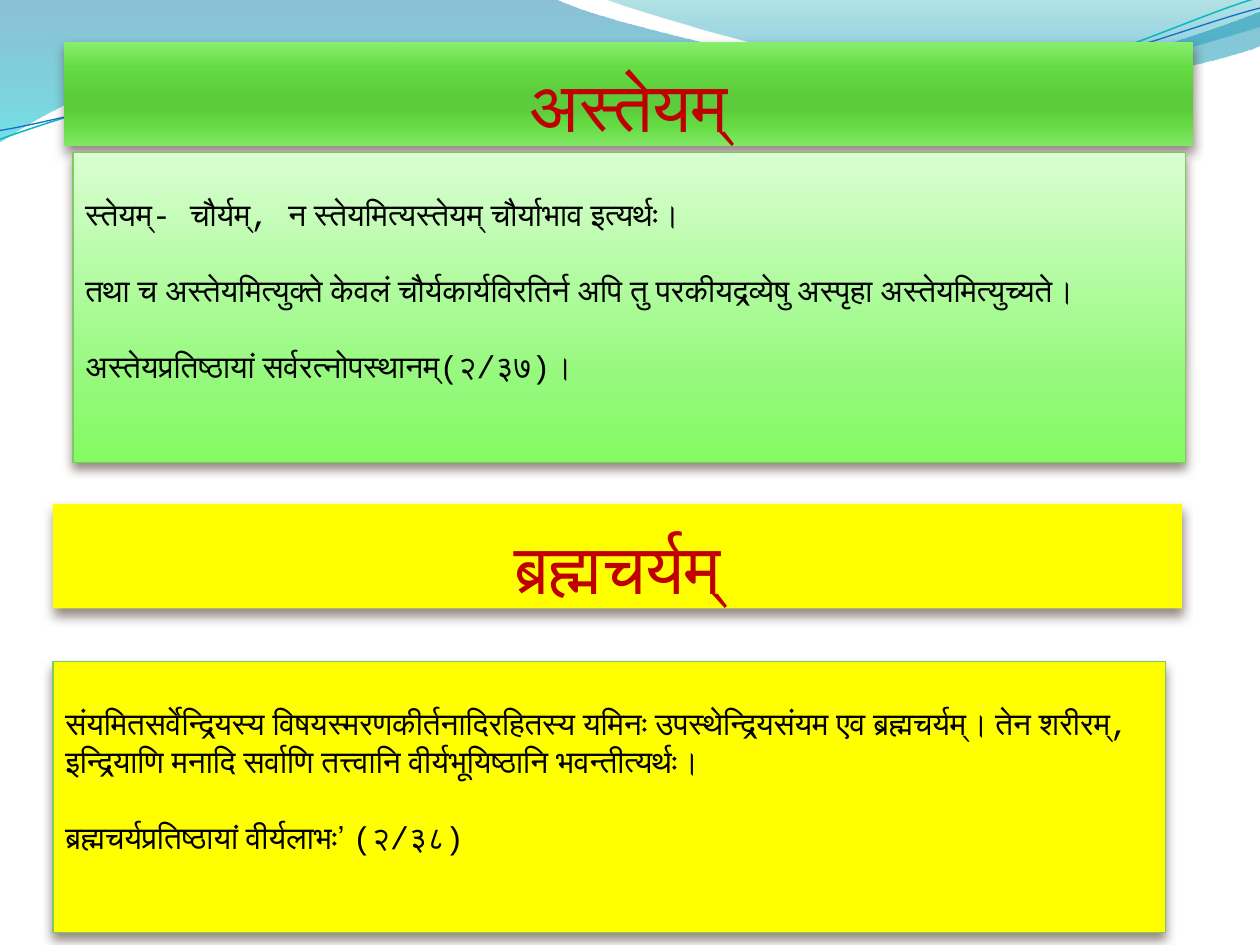
from dataclasses import dataclass

from lxml.etree import SubElement
from pptx import Presentation
from pptx.dml.color import RGBColor
from pptx.enum.shapes import MSO_SHAPE
from pptx.enum.text import MSO_ANCHOR, PP_ALIGN
from pptx.oxml.ns import qn
from pptx.util import Inches, Pt


@dataclass(frozen=True)
class Theme:
    heading_color: str = "C00000"
    body_color: str = "000000"
    border: str = "7CCA62"
    shadow: str = "4E3B30"
    yellow: str = "FFFF00"
    heading_font: str = "Arial"
    body_font: str = "Courier New"
    heading_size: int = 40
    body_size: int = 18
    # Gradient stops: position %, colour, opacity %
    green_banner: tuple = ((0, "89EE70", 100), (25, "65DC43", 100),
                           (50, "5CCC3C", 100), (65, "5CCC3C", 100),
                           (80, "64DB42", 100), (100, "82E868", 100))
    green_panel: tuple = ((0, "D9FED1", 100), (72, "96F97E", 100),
                          (100, "83FB62", 100))
    deep_wave: tuple = ((0, "0074A1", 45), (100, "00C6CF", 55))
    pale_wave: tuple = ((0, "00A1A9", 30), (80, "008BBF", 45))
    teal_line: str = "0AB8BF"
    blue_line: str = "0F6FC6"


THEME = Theme()
LINE_TILT = 357.3

# Wave outlines: a start, then steps of one point (straight) or three (Bezier)
DEEP_WAVE = [
    [(0, 0)],
    [(4.4, -0.01)],
    [(4.76, 0.17), (6.64, 0.63), (7.58, 0.63)],
    [(8.53, 0.63), (9.58, 0.26), (10, 0.09)],
    [(10.01, 0.36)],
    [(9.83, 0.44), (8.7, 0.76), (7.46, 0.75)],
    [(6.22, 0.75), (3.82, 0.28), (2.57, 0.34)],
    [(1.29, 0.36), (0.46, 0.83), (-0.01, 1.13)],
    [(0, 0)]]
PALE_WAVE = [
    [(4.79, -0.01)],
    [(5.09, 0.11), (6.82, 0.62), (7.69, 0.65)],
    [(8.56, 0.69), (9.61, 0.32), (10, 0.21)],
    [(10, 0)],
    [(4.79, -0.01)]]
TEAL_LINE = [
    [(-0.02, 0.87)],
    [(0.47, 0.72), (1.58, 0.41), (2.78, 0.42)],
    [(3.96, 0.42), (5.91, 0.93), (7.12, 0.9)],
    [(8.32, 0.87), (9.4, 0.36), (10, 0.22)]]
BLUE_LINE = [
    [(-0.02, 0.8)],
    [(0.46, 0.75), (1.64, 0.45), (2.83, 0.46)],
    [(4.03, 0.46), (5.96, 0.89), (7.16, 0.85)],
    [(8.35, 0.83), (9.42, 0.42), (10.02, 0.3)]]

ASTEYA = [
    "स्तेयम्- चौर्यम्, न स्तेयमित्यस्तेयम् चौर्याभाव इत्यर्थः।",
    "तथा च अस्तेयमित्युक्ते केवलं चौर्यकार्यविरतिर्न अपि तु परकीयद्रव्येषु अस्पृहा अस्तेयमित्युच्यते।",
    "अस्तेयप्रतिष्ठायां सर्वरत्नोपस्थानम्(२/३७)।",
]
BRAHMACHARYA = [
    "संयमितसर्वेन्द्रियस्य विषयस्मरणकीर्तनादिरहितस्य यमिनः उपस्थेन्द्रियसंयम एव ब्रह्मचर्यम्। "
    "तेन शरीरम्, इन्द्रियाणि मनादि सर्वाणि तत्त्वानि वीर्यभूयिष्ठानि भवन्तीत्यर्थः।",
    "ब्रह्मचर्यप्रतिष्ठायां वीर्यलाभः’ (२/३८)",
]

HEADING_FORMAT = {
    "frame": {"word_wrap": True, "vertical_anchor": MSO_ANCHOR.BOTTOM,
              "margin_left": 0, "margin_right": 0,
              "margin_top": Inches(0.05), "margin_bottom": 0},
    "paragraph": {"alignment": PP_ALIGN.CENTER},
    "font": {"name": THEME.heading_font, "size": Pt(THEME.heading_size)},
    "color": THEME.heading_color,
}
BODY_FORMAT = {
    "frame": {"word_wrap": True, "vertical_anchor": MSO_ANCHOR.TOP,
              "margin_left": Inches(0.1), "margin_right": Inches(0.1),
              "margin_top": Inches(0.34), "margin_bottom": 0},
    "paragraph": {"alignment": PP_ALIGN.LEFT, "space_after": Pt(21.7)},
    "font": {"name": THEME.body_font, "size": Pt(THEME.body_size)},
    "color": THEME.body_color,
}


def apply_format(target, values):
    for attribute, value in values.items():
        setattr(target, attribute, value)


def add_color(parent, color, opacity):
    node = SubElement(parent, qn("a:srgbClr"), val=color)
    if opacity < 100:
        SubElement(node, qn("a:alpha"), val=str(opacity * 1000))


def paint(shape, fill, border=None, width=0.79):
    """Fill with a colour, gradient stops or nothing, and set the outline."""
    if fill is None:
        shape.fill.background()
    elif isinstance(fill, str):
        shape.fill.solid()
        shape.fill.fore_color.rgb = RGBColor.from_string(fill)
    else:
        shape.fill.gradient()
        shape.fill.gradient_angle = 270  # top to bottom
        stops = next(shape._element.spPr.iter(qn("a:gsLst")))
        stops.clear()
        for position, color, opacity in fill:
            stop = SubElement(stops, qn("a:gs"), pos=str(position * 1000))
            add_color(stop, color, opacity)
    if border:
        shape.line.color.rgb = RGBColor.from_string(border)
        shape.line.width = Pt(width)
    else:
        shape.line.fill.background()
    shape.shadow.inherit = False


def add_shadow(shape):
    effects = shape._element.spPr.find(qn("a:effectLst"))
    shadow = SubElement(effects, qn("a:outerShdw"), blurRad=str(Pt(6)),
                        dist=str(Pt(4)), dir="5400000", rotWithShape="0")
    add_color(shadow, THEME.shadow, 60)


def bend(wave, steps):
    """Turn the straight segments of three-point steps into Bezier curves."""
    outline = next(wave._element.spPr.iter(qn("a:path")))
    for segment, step in zip(list(outline.iter(qn("a:lnTo"))), steps):
        if len(step) == 3:
            curve = SubElement(outline, qn("a:cubicBezTo"))
            for x, y in step:
                SubElement(curve, qn("a:pt"), x=str(Inches(x) - wave.left),
                           y=str(Inches(y) - wave.top))
            outline.replace(segment, curve)


def add_wave(slide, steps, fill=None, border=None, width=0.75, tilt=0):
    start, *corners = [tuple(map(Inches, step[-1])) for step in steps]
    builder = slide.shapes.build_freeform(*start)
    builder.add_line_segments(corners, close=fill is not None)
    wave = builder.convert_to_shape()
    bend(wave, steps[1:])
    wave.rotation = tilt
    paint(wave, fill, border, width)


def add_panel(slide, box, lines, fill, text_format, border=None):
    panel = slide.shapes.add_shape(MSO_SHAPE.RECTANGLE, *map(Inches, box))
    paint(panel, fill, border)
    add_shadow(panel)
    frame = panel.text_frame
    apply_format(frame, text_format["frame"])
    for index, line in enumerate(lines):
        paragraph = frame.add_paragraph() if index else frame.paragraphs[0]
        apply_format(paragraph, text_format["paragraph"])
        run = paragraph.add_run()
        run.text = line
        apply_format(run.font, text_format["font"])
        run.font.color.rgb = RGBColor.from_string(text_format["color"])


def main():
    deck = Presentation()
    deck.slide_width, deck.slide_height = Inches(10), Inches(7.5)
    slide = deck.slides.add_slide(deck.slide_layouts[6])

    # Waves along the top edge
    add_wave(slide, DEEP_WAVE, fill=THEME.deep_wave)
    add_wave(slide, PALE_WAVE, fill=THEME.pale_wave)
    add_wave(slide, TEAL_LINE, border=THEME.teal_line, width=0.85, tilt=LINE_TILT)
    add_wave(slide, BLUE_LINE, border=THEME.blue_line, tilt=LINE_TILT)

    # Non-stealing: green heading and explanation
    add_panel(slide, (0.51, 0.33, 8.96, 0.83), ["अस्तेयम्"],
              THEME.green_banner, HEADING_FORMAT)
    add_panel(slide, (0.58, 1.21, 8.83, 2.46), ASTEYA,
              THEME.green_panel, BODY_FORMAT, THEME.border)

    # Continence: yellow heading and explanation
    add_panel(slide, (0.42, 4, 8.96, 0.83), ["ब्रह्मचर्यम्"],
              THEME.yellow, HEADING_FORMAT)
    add_panel(slide, (0.42, 5.25, 8.83, 2.15), BRAHMACHARYA,
              THEME.yellow, BODY_FORMAT, THEME.border)

    deck.save("out.pptx")


if __name__ == "__main__":
    main()
